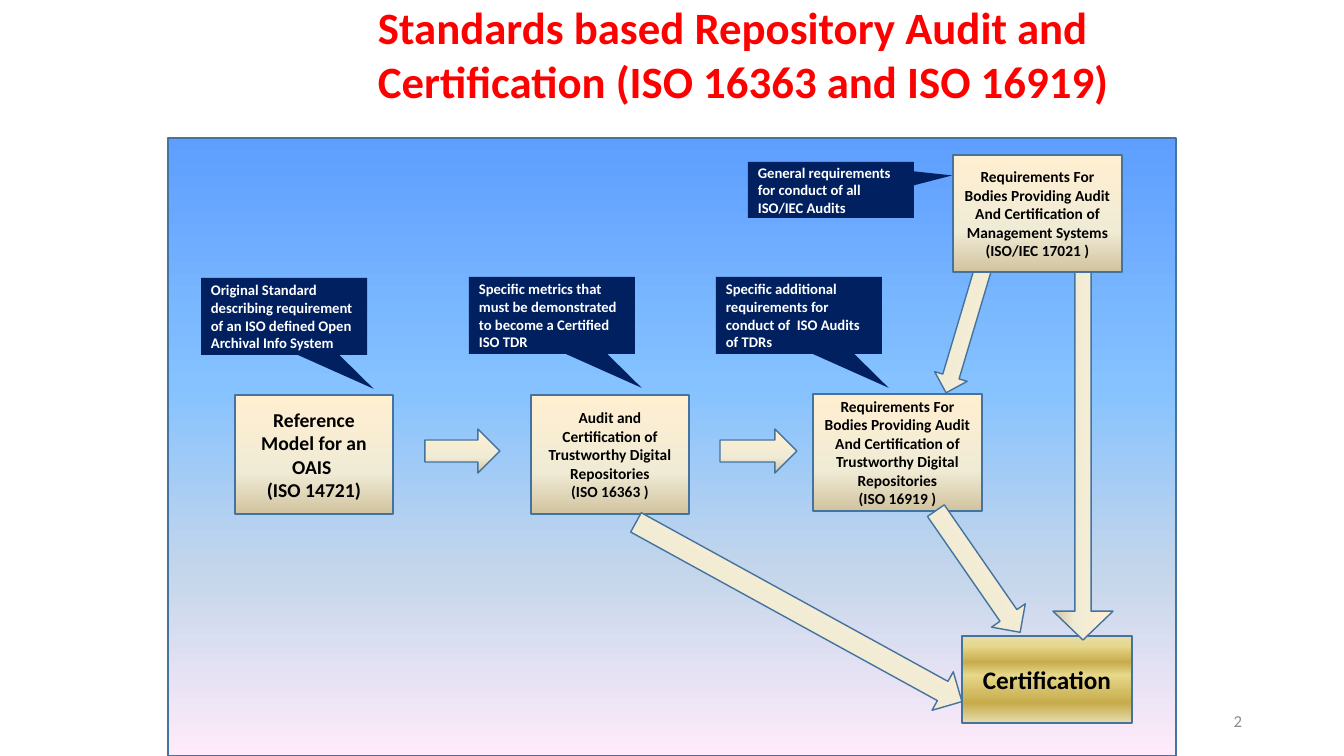
from lxml import etree
from pptx import Presentation
from pptx.dml.color import RGBColor
from pptx.enum.shapes import MSO_SHAPE
from pptx.enum.text import MSO_ANCHOR, PP_ALIGN
from pptx.oxml.ns import qn
from pptx.util import Emu, Pt

RECTANGLE = MSO_SHAPE.RECTANGLE
ARROW = MSO_SHAPE.RIGHT_ARROW
CALLOUT = MSO_SHAPE.RECTANGULAR_CALLOUT
TOP, MIDDLE = MSO_ANCHOR.TOP, MSO_ANCHOR.MIDDLE
LEFT, CENTER, RIGHT = PP_ALIGN.LEFT, PP_ALIGN.CENTER, PP_ALIGN.RIGHT

EMU_PER_PX = 914400 / 100.8
COLORS = {"outline": "43739E", "callout": "002060", "title": "FF0000",
          "black": "000000", "white": "FFFFFF", "number": "8C8C8C"}
# Vertical gradients as (position in percent, colour)
SKY = [(0, "5E9EFF"), (40, "85C2FF"), (70, "C4D6EB"), (100, "FFEBFA")]
PARCHMENT = [(0, "FFEFD1"), (65, "F0EBD5"), (100, "D1C39F")]
GOLD = [(0, "E6DCAC"), (12, "E6D78A"), (30, "C7AC4C"),
        (45, "E6D78A"), (77, "C7AC4C"), (100, "E6DCAC")]


def add_gradient_shape(preset, bounds, stops):
    """Add an outlined shape filled from top to bottom with the given stops."""
    shape = slide.shapes.add_shape(preset, *[Emu(round(v * EMU_PER_PX)) for v in bounds])
    shape.shadow.inherit = False
    shape.line.color.rgb = RGBColor.from_string(COLORS["outline"])
    shape.line.width = Pt(1)
    shape.fill.gradient()
    shape.fill.gradient_angle = 270
    stop_list = shape.element.spPr.find(qn("a:gradFill")).find(qn("a:gsLst"))
    for old_stop in list(stop_list):
        stop_list.remove(old_stop)
    for position, color in stops:
        stop = etree.SubElement(stop_list, qn("a:gs"), pos=str(position * 1000))
        etree.SubElement(stop, qn("a:srgbClr"), val=color)
    return shape


def write_text(shape, paragraphs, size, color, align, anchor=MIDDLE, bold=True):
    frame = shape.text_frame
    frame.word_wrap = True
    frame.vertical_anchor = anchor
    frame.text = "\n".join(paragraphs)
    font_values = {"name": "Calibri", "size": Pt(size), "bold": bold}
    for paragraph in frame.paragraphs:
        paragraph.alignment = align
        font = paragraph.runs[0].font
        for attribute, value in font_values.items():
            setattr(font, attribute, value)
        font.color.rgb = RGBColor.from_string(COLORS[color])


presentation = Presentation()
presentation.slide_width = Emu(round(1344 * EMU_PER_PX))
presentation.slide_height = Emu(round(756 * EMU_PER_PX))
slide = presentation.slides.add_slide(presentation.slide_layouts[6])

add_gradient_shape(RECTANGLE, (168, 138, 1008, 618), SKY)

# Standards and the resulting certification: bounds, gradient, text size, paragraphs
boxes = [
    ((235, 395, 158, 119), PARCHMENT, 14,
     ["Reference Model for an OAIS ", "(ISO 14721)"]),
    ((531, 395, 158, 119), PARCHMENT, 11,
     ["Audit and Certification of Trustworthy Digital Repositories", "(ISO 16363 )"]),
    ((813, 394, 169, 117), PARCHMENT, 11,
     ["Requirements For Bodies Providing Audit And Certification of "
      "Trustworthy Digital Repositories", "(ISO 16919 )"]),
    ((962, 636, 170, 87), GOLD, 18, ["Certification"]),
    ((953, 155, 169, 117), PARCHMENT, 11,
     ["Requirements For Bodies Providing Audit And Certification of "
      "Management Systems", "(ISO/IEC 17021 )"]),
]
# Bounds before rotation, rotation, adjustments
arrows = [
    ((425, 429, 75, 44), 0, (0.5, 0.5)),
    ((720, 429, 77, 44), 0, (0.5, 0.5)),
    ((900, 314, 129, 34), 106.6, (0.5, 0.5)),
    ((904, 551, 148, 41), 55.3, (0.5, 0.5)),
    ((893, 420, 380, 60), 90, (0.27, 0.48)),
    ((613, 590, 372, 44), 28.8, (0.5, 0.5)),
]

box_shapes = []
for bounds, stops, size, paragraphs in boxes:
    box = add_gradient_shape(RECTANGLE, bounds, stops)
    write_text(box, paragraphs, size, "black", CENTER)
    box_shapes.append(box)

for bounds, rotation, adjustments in arrows:
    arrow = add_gradient_shape(ARROW, bounds, PARCHMENT)
    arrow.rotation = rotation
    for index, value in enumerate(adjustments):
        arrow.adjustments[index] = value

# The ISO/IEC 17021 box covers the tails of the arrows that leave it
shape_tree = slide.shapes.element
shape_tree.append(box_shapes[-1].element)

# Left, top, height, pointer position, text
callouts = [
    (748, 162, 56, (0.73, -0.26), "General requirements for conduct of all ISO/IEC Audits"),
    (716, 277, 77, (0.54, 0.94),
     "Specific additional requirements for conduct of  ISO Audits of TDRs"),
    (469, 277, 77, (0.54, 0.94),
     "Specific metrics that must be demonstrated to become a Certified ISO TDR"),
    (201, 278, 77, (0.54, 0.94),
     "Original Standard describing requirement of an ISO defined Open Archival Info System"),
]
for left, top, height, pointer, text in callouts:
    callout = add_gradient_shape(CALLOUT, (left, top, 166, height), PARCHMENT)
    callout.fill.solid()
    callout.fill.fore_color.rgb = RGBColor.from_string(COLORS["callout"])
    callout.line.fill.background()
    for index, value in enumerate(pointer):
        callout.adjustments[index] = value
    write_text(callout, [text], 10.5, "white", LEFT)

labels = [
    ((368, -5, 767, 149), "Standards based Repository Audit and Certification "
     "(ISO 16363 and ISO 16919)", 32, "title", LEFT, TOP, True),
    ((950, 701, 302, 40), "2", 12, "number", RIGHT, MIDDLE, False),
]
for bounds, text, size, color, align, anchor, bold in labels:
    label = slide.shapes.add_textbox(*[Emu(round(v * EMU_PER_PX)) for v in bounds])
    write_text(label, [text], size, color, align, anchor, bold)

presentation.save("out.pptx")
